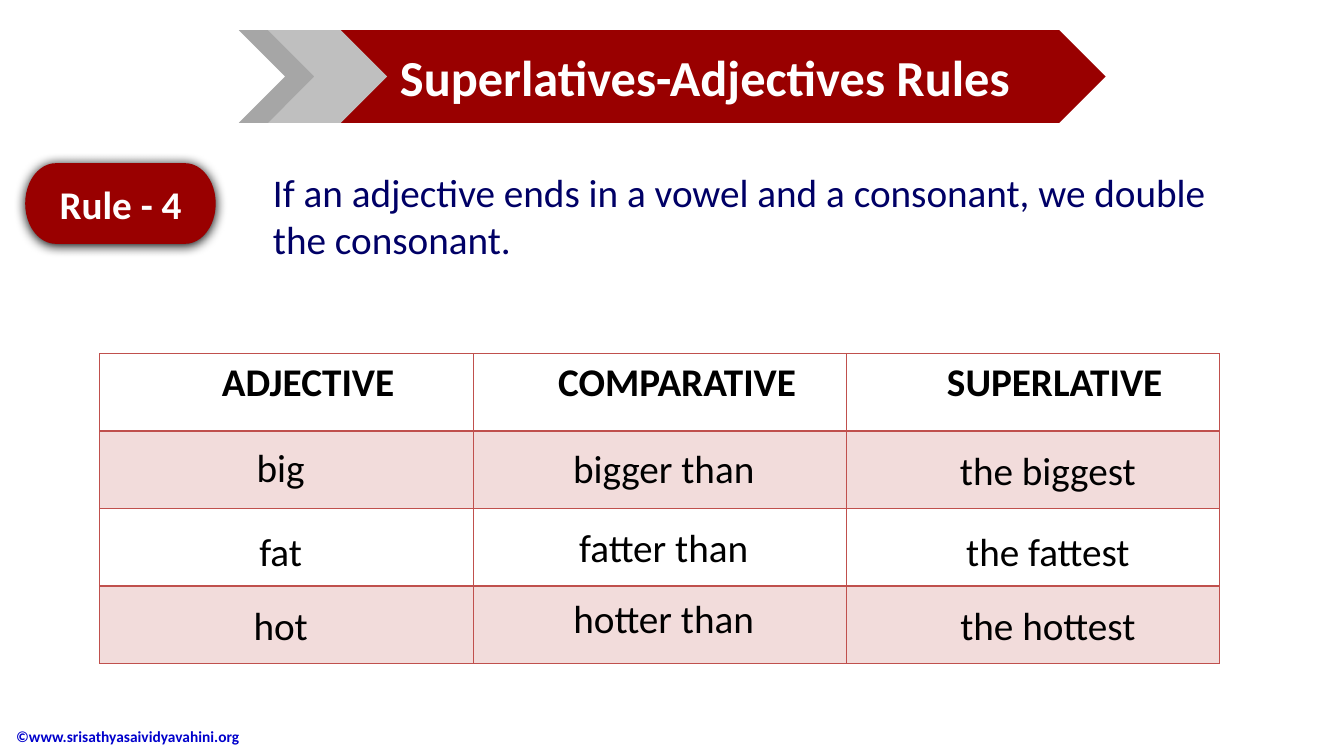
from lxml.etree import SubElement
from pptx import Presentation
from pptx.dml.color import RGBColor
from pptx.enum.shapes import MSO_SHAPE
from pptx.enum.text import MSO_ANCHOR, PP_ALIGN
from pptx.oxml import parse_xml
from pptx.oxml.ns import nsdecls, qn
from pptx.util import Pt

# Content
TITLE = "Superlatives-Adjectives Rules"
RULE = "Rule - 4"
RULE_TEXT = "If an adjective ends in a vowel and a consonant, we double the consonant."
FOOTER = "©www.srisathyasaividyavahini.org"
# heading, heading left margin, word box left, word box width, (word, top) per row
COLUMNS = [
    ("ADJECTIVE", 38, 156.2, 88.6, [("big", 313.2), ("fat", 373), ("hot", 426.2)]),
    ("COMPARATIVE", 32, 393.8, 160.6,
     [("bigger than", 313.9), ("fatter than", 370.1), ("hotter than", 421.2)]),
    ("SUPERLATIVE", 38, 668.2, 160.6,
     [("the biggest", 315.4), ("the fattest", 373), ("the hottest", 426.2)]),
]

# Colours and layout
WHITE = RGBColor(0xFF, 0xFF, 0xFF)
BLACK = RGBColor(0, 0, 0)
NAVY = RGBColor(0, 0, 0x66)
BLUE = RGBColor(0, 0, 0xCC)
MAROON = RGBColor(0x99, 0, 0)
GREY = RGBColor(0xA6, 0xA6, 0xA6)
LIGHT_GREY = RGBColor(0xBF, 0xBF, 0xBF)
RED = RGBColor(0xC0, 0x50, 0x4D)
PINK = RGBColor(0xF2, 0xDC, 0xDB)
ROWS, ROW_H, WORD_H = 4, 55.3, 41.2
TABLE_X, TABLE_Y, TABLE_W = 71.3, 252.7, 800
BANNER_Y, BANNER_H, CHEVRON_W = 21.6, 66.2, 85


def set_text(tf, text, size=28, color=BLACK, bold=False, align=PP_ALIGN.CENTER,
             anchor=MSO_ANCHOR.TOP):
    tf.word_wrap = True
    tf.vertical_anchor = anchor
    p = tf.paragraphs[0]
    p.alignment = align
    r = p.add_run()
    r.text = text
    r.font.name = "Calibri"
    r.font.size = Pt(size)
    r.font.bold = bold
    r.font.color.rgb = color


def add_box(shapes, x, y, w, h, text, **fmt):
    s = shapes.add_textbox(Pt(x), Pt(y), Pt(w), Pt(h))
    set_text(s.text_frame, text, **fmt)
    return s


def add_solid(shapes, kind, x, y, w, h, color):
    s = shapes.add_shape(kind, Pt(x), Pt(y), Pt(w), Pt(h))
    s.shadow.inherit = False
    s.fill.solid()
    s.fill.fore_color.rgb = color
    s.line.fill.background()
    return s


def set_border(cell, side, width):
    tc_pr = cell._tc.get_or_add_tcPr()
    ln = SubElement(tc_pr, qn("a:" + side), w=str(Pt(width)))
    fill = SubElement(ln, qn("a:solidFill"))
    SubElement(fill, qn("a:srgbClr"), val=str(RED))


prs = Presentation()
prs.slide_width, prs.slide_height = Pt(960), Pt(540)
slide = prs.slides.add_slide(prs.slide_layouts[6])
shapes = slide.shapes

# Footer
footer = add_box(shapes, -31.7, 511.2, 290.2, 29.5, FOOTER, size=11, color=BLUE,
                 bold=True, align=PP_ALIGN.LEFT, anchor=MSO_ANCHOR.MIDDLE)
footer.text_frame.margin_left = Pt(43.2)

# Table
table = shapes.add_table(ROWS, len(COLUMNS), Pt(TABLE_X), Pt(TABLE_Y),
                         Pt(TABLE_W), Pt(ROWS * ROW_H)).table
table.first_row = table.horz_banding = False
for row in table.rows:
    row.height = Pt(ROW_H)
for i in range(ROWS):
    for j in range(len(COLUMNS)):
        cell = table.cell(i, j)
        for side in ("lnL", "lnR", "lnT", "lnB"):
            heavy = (i, side) in ((0, "lnB"), (1, "lnT"))
            set_border(cell, side, 2 if heavy else 1)
        if i % 2:
            cell.fill.solid()
            cell.fill.fore_color.rgb = PINK
        else:
            cell.fill.background()

# Headings and words
for j, (heading, margin, x, w, words) in enumerate(COLUMNS):
    cell = table.cell(0, j)
    cell.margin_left = Pt(margin)
    set_text(cell.text_frame, heading, bold=True)
    for word, y in words:
        add_box(shapes, x, y, w, WORD_H, word)

# Rule
add_box(shapes, 187.9, 116.6, 708.5, 74.9, RULE_TEXT, color=NAVY, align=PP_ALIGN.LEFT)
badge = add_solid(shapes, MSO_SHAPE.FLOWCHART_TERMINATOR, 18, 116.6, 136.1, 57.6, MAROON)
set_text(badge.text_frame, RULE, color=WHITE, bold=True, anchor=MSO_ANCHOR.MIDDLE)
effects = badge._element.spPr.find(qn("a:effectLst"))
effects.append(parse_xml(
    f'<a:outerShdw {nsdecls("a")} blurRad="{Pt(8.5)}" dist="{Pt(1)}" dir="5400000" '
    'algn="t" rotWithShape="0"><a:srgbClr val="000000"/></a:outerShdw>'))

# Title banner
banner = shapes.add_group_shape().shapes
add_solid(banner, MSO_SHAPE.CHEVRON, 170.6, BANNER_Y, CHEVRON_W, BANNER_H, GREY)
title = add_solid(banner, MSO_SHAPE.PENTAGON, 234, BANNER_Y, 555.8, BANNER_H, MAROON)
set_text(title.text_frame, TITLE, size=36, color=WHITE, bold=True,
         anchor=MSO_ANCHOR.MIDDLE)
add_solid(banner, MSO_SHAPE.CHEVRON, 191.5, BANNER_Y, CHEVRON_W, BANNER_H, LIGHT_GREY)

prs.save("out.pptx")
